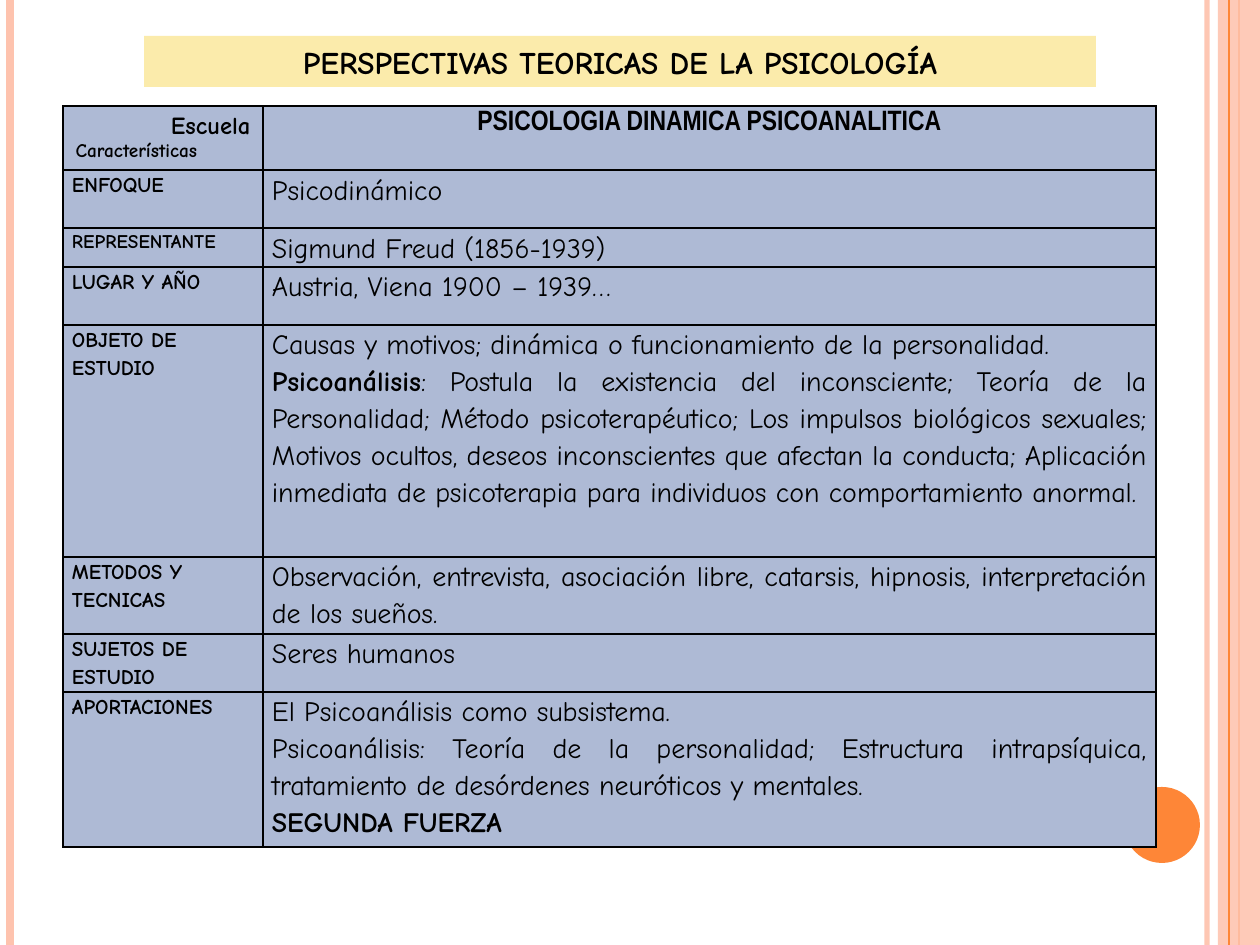
from lxml.etree import SubElement
from pptx import Presentation
from pptx.dml.color import RGBColor
from pptx.enum.shapes import MSO_CONNECTOR, MSO_SHAPE
from pptx.enum.text import MSO_ANCHOR, PP_ALIGN as ALIGN
from pptx.oxml import parse_xml
from pptx.oxml.ns import nsdecls, qn
from pptx.util import Emu, Pt


def px(length):
    return Emu(round(length * 914400 / 126))


def paint(color_format, color, alpha=100):
    color_format.rgb = RGBColor.from_string(color)
    if alpha < 100:
        for node in color_format._xFill.iter(qn("a:srgbClr")):
            SubElement(node, qn("a:alpha"), val=str(alpha * 1000))


FONT = "Comic Neue"
PEACH, ORANGE, CREAM, BLUE, BLACK = "FEC3AE", "FE8637", "FBEBAB", "AEBAD5", "000000"

presentation = Presentation()
presentation.slide_width, presentation.slide_height = px(1260), px(945)
slide = presentation.slides.add_slide(presentation.slide_layouts[6])

stripes = [(1207, PEACH, 3, 93), (10, PEACH, 4.5, 100), (1239, ORANGE, 1.5, 100), (1229, ORANGE, 0.75, 100)]
panels = [
    (MSO_SHAPE.RECTANGLE, 1218, 0, 42, 945, PEACH, 87),
    (MSO_SHAPE.OVAL, 1124, 787, 76, 76, ORANGE, 100),
    (MSO_SHAPE.RECTANGLE, 144, 36, 952, 51, CREAM, 100),
]

for index, (x, color, weight, alpha) in enumerate(stripes):
    if index == 3:
        kind, left, top, width, height, fill, fill_alpha = panels[0]
        band = slide.shapes.add_shape(kind, px(left), px(top), px(width), px(height))
        band.shadow.inherit = False
        band.fill.solid()
        paint(band.fill.fore_color, fill, fill_alpha)
        band.line.fill.background()
    stripe = slide.shapes.add_connector(MSO_CONNECTOR.STRAIGHT, px(x), 0, px(x), px(945))
    stripe.line.width = Pt(weight)
    stripe.line.fill.solid()
    paint(stripe.line.fill.fore_color, color, alpha)
    SubElement(stripe._element.spPr, qn("a:effectLst"))

for kind, left, top, width, height, color, alpha in panels[1:]:
    shape = slide.shapes.add_shape(kind, px(left), px(top), px(width), px(height))
    shape.shadow.inherit = False
    shape.fill.solid()
    paint(shape.fill.fore_color, color, alpha)
    shape.line.fill.background()

title = shape.text_frame
title.text = "PERSPECTIVAS TEORICAS DE LA PSICOLOGÍA"
title.vertical_anchor = MSO_ANCHOR.MIDDLE
paragraph = title.paragraphs[0]
paragraph.alignment = ALIGN.CENTER
paragraph.font.name, paragraph.font.size, paragraph.font.bold = FONT, Pt(18), True
paint(paragraph.font.color, BLACK)

rows = [
    (58, "ENFOQUE", 12, [("", "Psicodinámico")]),
    (39, "REPRESENTANTE", 11, [("", "Sigmund Freud (1856-1939)")]),
    (58, "LUGAR Y AÑO", 12, [("", "Austria, Viena 1900 – 1939…")]),
    (232, "OBJETO DE ESTUDIO", 12, [
        ("", "Causas y motivos; dinámica o funcionamiento de la personalidad."),
        ("Psicoanálisis", ": Postula la existencia del inconsciente; Teoría de la Personalidad; "
         "Método psicoterapéutico; Los impulsos biológicos sexuales; Motivos ocultos, deseos "
         "inconscientes que afectan la conducta; Aplicación inmediata de psicoterapia para "
         "individuos con comportamiento anormal."),
    ]),
    (77, "METODOS Y TECNICAS", 12, [
        ("", "Observación, entrevista, asociación libre, catarsis, hipnosis, "
         "interpretación de los sueños."),
    ]),
    (58, "SUJETOS DE ESTUDIO", 12, [("", "Seres humanos")]),
    (155, "APORTACIONES", 12, [
        ("", "El Psicoanálisis como subsistema."),
        ("", "Psicoanálisis: Teoría de la personalidad; Estructura intrapsíquica, "
         "tratamiento de desórdenes neuróticos y mentales."),
        ("SEGUNDA FUERZA", ""),
    ]),
]
cells = [
    [
        [("Escuela", "", ALIGN.RIGHT, 14, FONT, 1), ("Características", "", ALIGN.LEFT, 11, FONT, 1)],
        [("PSICOLOGIA DINAMICA PSICOANALITICA", "", ALIGN.CENTER, 16, "Arial Narrow", 1.15)],
    ]
]
for height, label, size, entries in rows:
    cells.append([
        [(label, "", ALIGN.LEFT, size, FONT, 1.15)],
        [(strong, plain, ALIGN.JUSTIFY, 16, FONT, 1.15) for strong, plain in entries],
    ])

heights = [64] + [row[0] for row in rows]
widths = [200, 893]
frame = slide.shapes.add_table(len(heights), 2, px(63), px(106), px(sum(widths)), px(sum(heights)))
table = frame.table
table.first_row = table.horz_banding = False
for column, width in zip(table.columns, widths):
    column.width = px(width)
for row, height in zip(table.rows, heights):
    row.height = px(height)

for row_index, row_cells in enumerate(cells):
    for column_index, entries in enumerate(row_cells):
        cell = table.cell(row_index, column_index)
        if row_index or column_index:
            cell.margin_left = cell.margin_right = px(9)
            cell.margin_top = cell.margin_bottom = 0
        properties = cell._tc.get_or_add_tcPr()
        for side in "LRTB":
            properties.append(parse_xml(
                f'<a:ln{side} {nsdecls("a")} w="12700"><a:solidFill>'
                f'<a:srgbClr val="{BLACK}"/></a:solidFill></a:ln{side}>'
            ))
        cell.fill.solid()
        paint(cell.fill.fore_color, BLUE)
        for index, (strong, plain, alignment, size, font, spacing) in enumerate(entries):
            text_frame = cell.text_frame
            paragraph = text_frame.add_paragraph() if index else text_frame.paragraphs[0]
            paragraph.alignment, paragraph.line_spacing = alignment, spacing
            for text, bold in ((strong, True), (plain, False)):
                if text:
                    run = paragraph.add_run()
                    run.text = text
                    run.font.name, run.font.size, run.font.bold = font, Pt(size), bold
                    paint(run.font.color, BLACK)

presentation.save("out.pptx")
